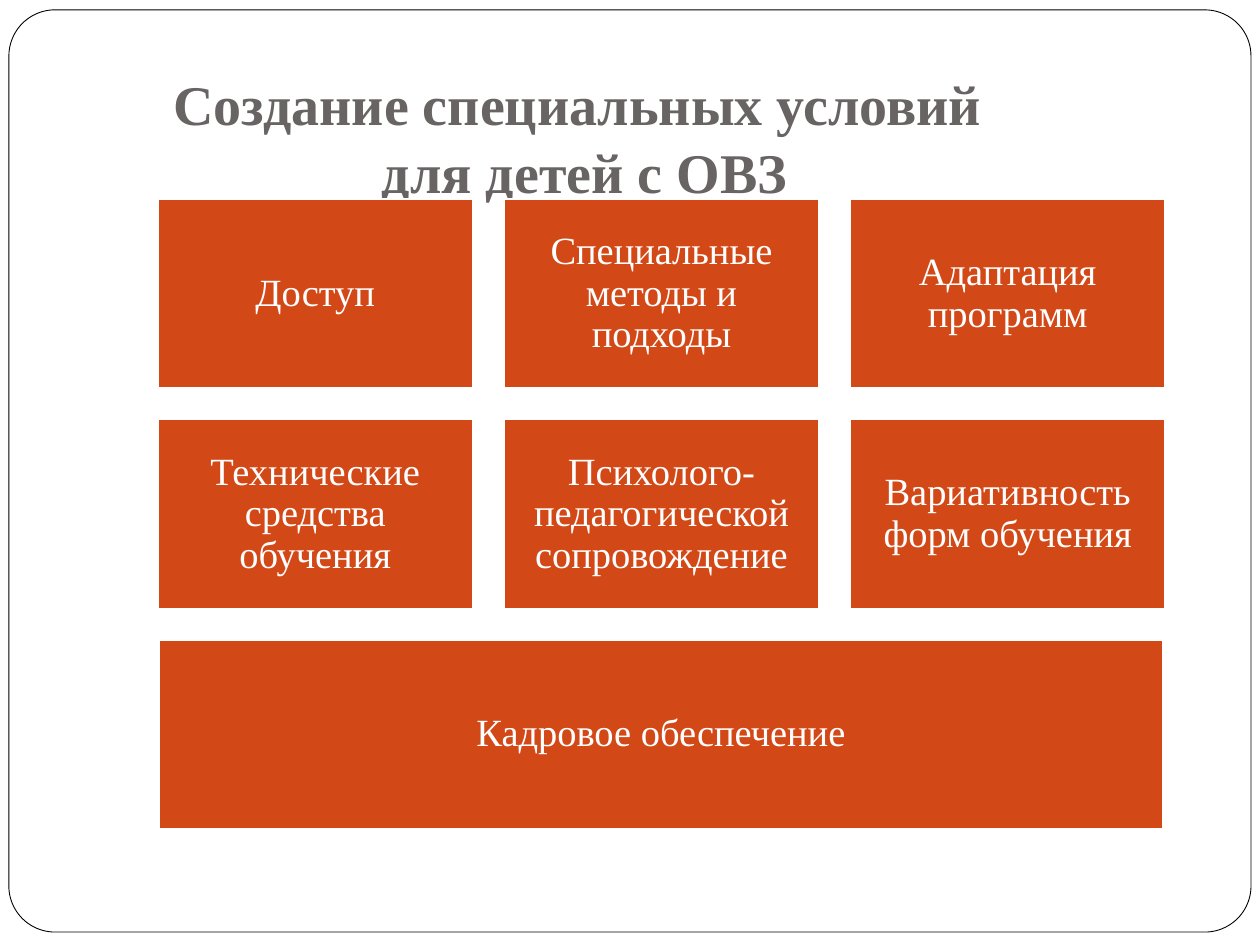
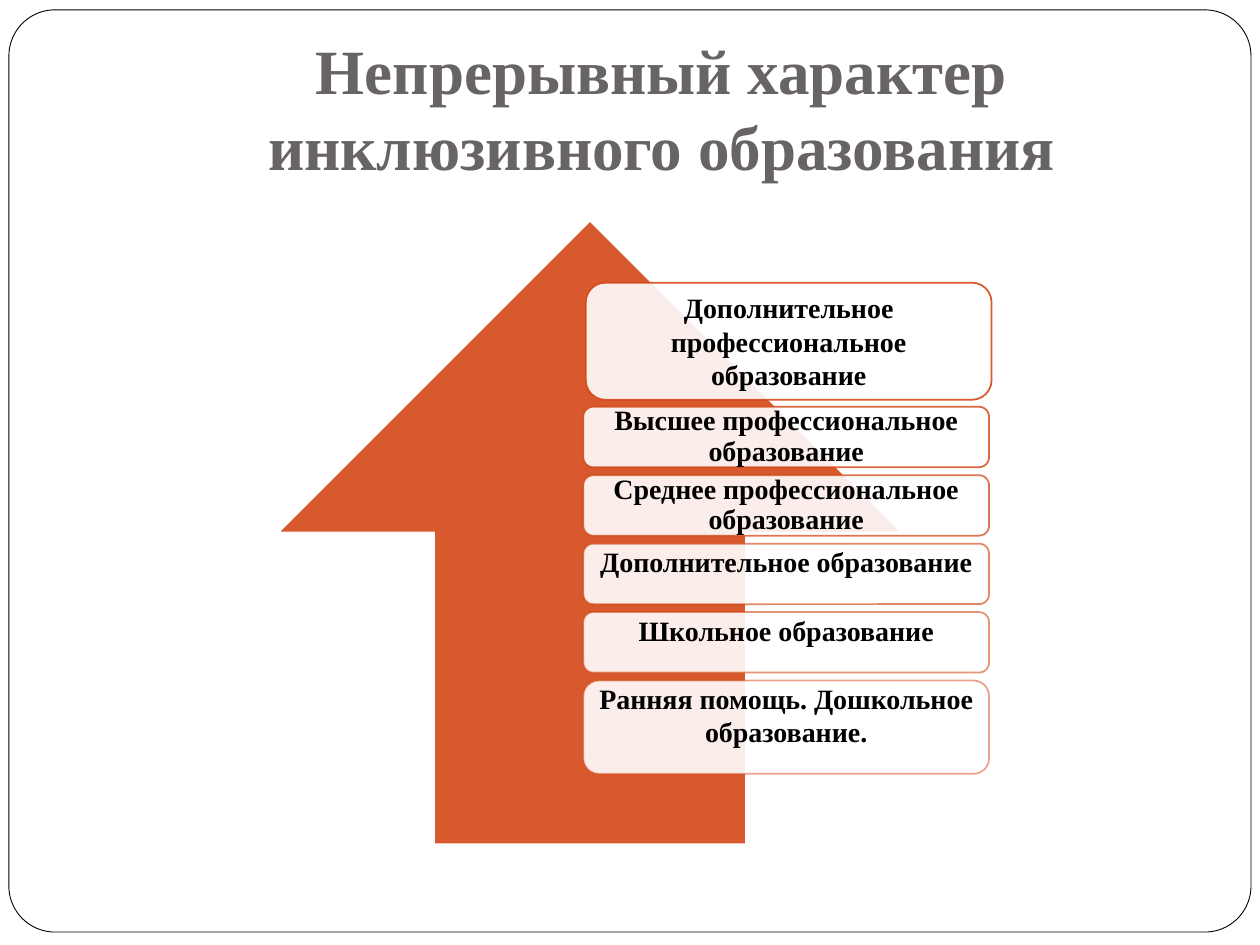
from dataclasses import dataclass

from lxml.etree import SubElement
from pptx import Presentation
from pptx.dml.color import RGBColor
from pptx.enum.shapes import MSO_SHAPE
from pptx.enum.text import MSO_ANCHOR, PP_ALIGN
from pptx.oxml.ns import qn
from pptx.util import Cm, Pt


@dataclass(frozen=True)
class Theme:
    font: str = "Times New Roman"
    accent: str = "D34817"
    paper: str = "FFFFFF"
    ink: str = "000000"
    heading: str = "696464"
    tile_size: int = 22
    step_size: int = 16
    tight: float = 0.9


THEME = Theme()

CONDITIONS = {
    "title": "Создание специальных условий\v для детей с ОВЗ",
    "title_place": (1.27, 1.12, 20.75, 3.25),
    "title_size": 32,
    "tiles": [
        "Доступ",
        "Специальные методы и подходы",
        "Адаптация программ",
        "Технические средства обучения",
        "Психолого-педагогической сопровождение",
        "Вариативность форм обучения",
    ],
    "base": "Кадровое обеспечение",
}

CONTINUITY = {
    "title": "Непрерывный характер инклюзивного образования",
    "title_place": (2.54, 0.76, 21.59, 3.18),
    "title_size": 36,
    "top_step": "Дополнительное профессиональное образование",
    "steps": [
        ("Высшее профессиональное образование", 1.22, THEME.tight, 0.18),
        ("Среднее профессиональное образование", 1.22, THEME.tight, 0.18),
        ("Дополнительное образование", 1.22, 1.0, 0.68),
        ("Школьное образование", 1.22, 1.0, 0.68),
        ("Ранняя помощь. Дошкольное образование.", 1.88, 1.0, 0.68),
    ],
}


def paint(fill, color, opacity=100):
    fill.solid()
    fill.fore_color.rgb = RGBColor.from_string(color)
    if opacity < 100:
        tone = fill._xPr.find(qn("a:solidFill"))[0]
        SubElement(tone, qn("a:alpha")).set("val", str(opacity * 1000))


def add_box(page, kind, place, fill, line, width=1, fill_opacity=100, line_opacity=100):
    box = page.shapes.add_shape(kind, *map(Cm, place))
    box.shadow.inherit = False
    paint(box.fill, fill, fill_opacity)
    box.line.width = Pt(width)
    paint(box.line.fill, line, line_opacity)
    return box


def write(box, text, size, color, insets, anchor=MSO_ANCHOR.MIDDLE, bold=False, spacing=1.0):
    frame = box.text_frame
    frame.word_wrap = True
    frame.vertical_anchor = anchor
    frame.margin_left, frame.margin_top, frame.margin_right, frame.margin_bottom = map(Cm, insets)
    frame.text = text
    para = frame.paragraphs[0]
    para.alignment = PP_ALIGN.CENTER
    para.line_spacing = spacing
    for span in para.runs:
        span.font.name = THEME.font
        span.font.size = Pt(size)
        span.font.bold = bold
        span.font.color.rgb = RGBColor.from_string(color)


def add_page(deck, content):
    page = deck.slides.add_slide(deck.slide_layouts[6])
    border = add_box(page, MSO_SHAPE.ROUNDED_RECTANGLE, (0.18, 0.2, 25.04, 18.59),
                     THEME.paper, THEME.ink, 0.5)
    border.adjustments[0] = 0.05
    title = page.shapes.add_textbox(*map(Cm, content["title_place"]))
    write(title, content["title"], content["title_size"], THEME.heading,
          (0.25, 0.13, 0.25, 0.25), MSO_ANCHOR.BOTTOM, bold=True)
    return page


def add_tile(page, text, place):
    tile = add_box(page, MSO_SHAPE.RECTANGLE, place, THEME.accent, THEME.paper)
    write(tile, text, THEME.tile_size, THEME.paper, (0.23,) * 4, spacing=THEME.tight)


def build_conditions(deck):
    page = add_page(deck, CONDITIONS)
    left, top, width, height, gap, columns = 3.18, 4.02, 6.35, 3.81, 0.63, 3
    for index, text in enumerate(CONDITIONS["tiles"]):
        row, column = divmod(index, columns)
        add_tile(page, text, (left + column * (width + gap), top + row * (height + gap),
                              width, height))
    rows = len(CONDITIONS["tiles"]) // columns
    add_tile(page, CONDITIONS["base"], (3.2, top + rows * (height + gap), 20.25, height))


def add_step(page, text, place, line_opacity, spacing=1.0, bottom_inset=0.18):
    step = add_box(page, MSO_SHAPE.ROUNDED_RECTANGLE, place, THEME.paper, THEME.accent,
                   fill_opacity=90, line_opacity=line_opacity)
    write(step, text, THEME.step_size, THEME.ink, (0.18, 0.18, 0.18, bottom_inset),
          bold=True, spacing=spacing)


def build_continuity(deck):
    page = add_page(deck, CONTINUITY)
    add_box(page, MSO_SHAPE.UP_ARROW, (5.61, 4.45, 12.57, 12.57), THEME.accent, THEME.paper,
            fill_opacity=90)
    left, top, width, pitch = 11.76, 8.2, 8.18, 1.38
    add_step(page, CONTINUITY["top_step"], (11.81, 5.7, width, 2.36), 90)
    for index, (text, height, spacing, bottom_inset) in enumerate(CONTINUITY["steps"]):
        add_step(page, text, (left, top + index * pitch, width, height),
                 82 - 8 * index, spacing, bottom_inset)


def main():
    deck = Presentation()
    deck.slide_width, deck.slide_height = Cm(25.4), Cm(19.05)
    build_conditions(deck)
    build_continuity(deck)
    deck.save("out.pptx")


if __name__ == "__main__":
    main()
